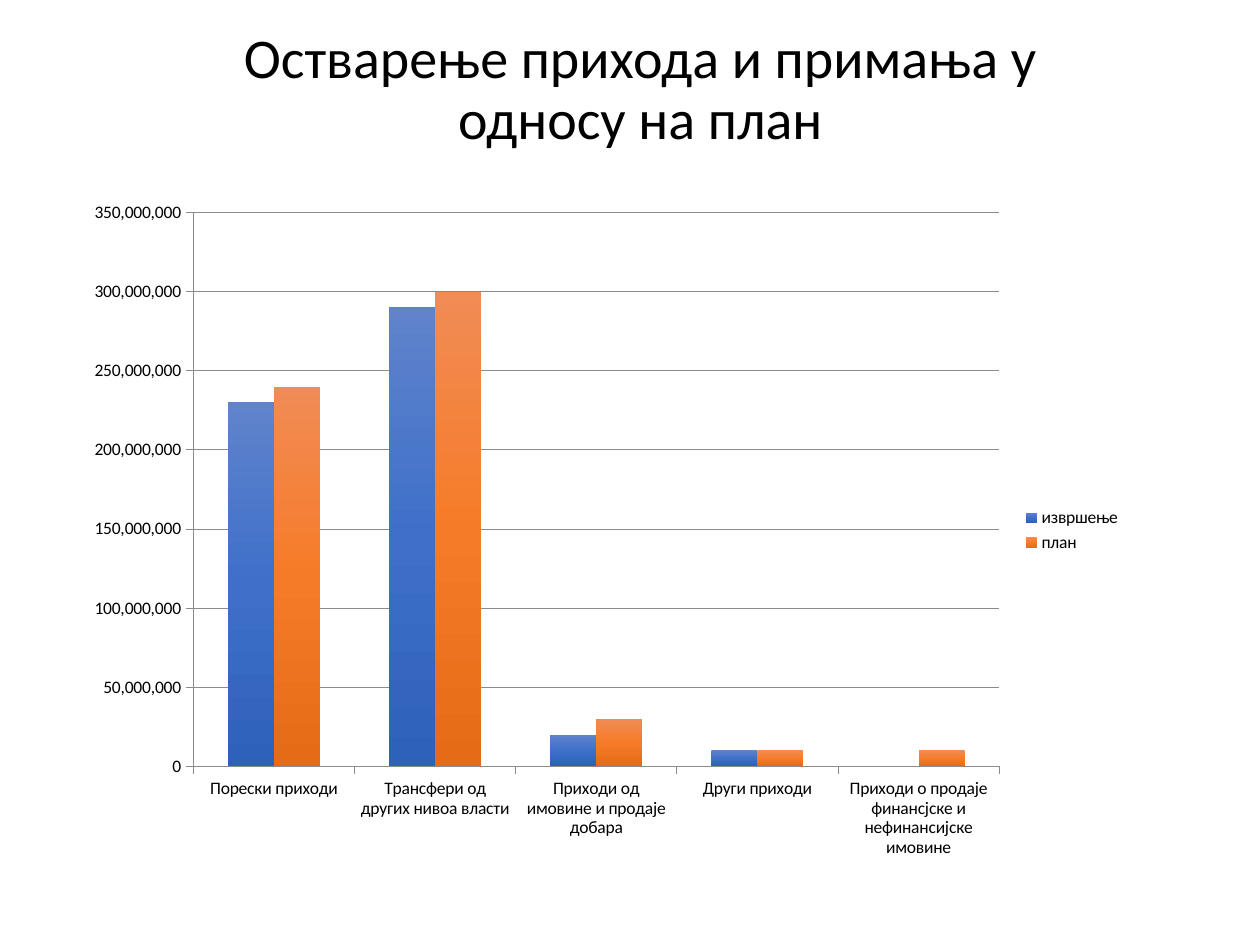
"""Build a slide comparing realised revenues with the plan in a column chart."""
from copy import deepcopy

from lxml.etree import SubElement
from pptx import Presentation
from pptx.chart.data import CategoryChartData as ChartData
from pptx.dml.color import RGBColor as Color
from pptx.enum.chart import XL_CHART_TYPE as ChartType
from pptx.enum.chart import XL_LEGEND_POSITION as LegendPosition
from pptx.enum.chart import XL_TICK_MARK as TickMark
from pptx.enum.text import MSO_ANCHOR as Anchor
from pptx.enum.text import MSO_AUTO_SIZE as AutoSize
from pptx.enum.text import PP_ALIGN as Align
from pptx.oxml.ns import qn
from pptx.util import Pt

TITLE = "Остварење прихода и примања у односу на план"
CATEGORIES = [
    "Порески приходи",
    "Трансфери од других нивоа власти",
    "Приходи од имовине и продаје добара",
    "Други приходи",
    "Приходи о продаје финансјске и нефинансијске имовине",
]
SERIES = {
    "извршење": [230000000, 290000000, 20000000, 10000000, 0],
    "план": [240000000, 300000000, 30000000, 10000000, 10000000],
}
THEME = {
    "font": "Calibri",
    "text": "000000",
    "line": "8B8B8B",
    "line_width": 0.5,
    "title_size": 32,
    "chart_size": 10,
    "gradients": [("6083CB", "3E70CA", "2E61BA"), ("F18C55", "F67B28", "E56B17")],
}
SLIDE_SIZE = (720, 540)
TITLE_BOX = (102, 54, 528, 36)
CHART_BOX = (42, 108, 606, 390)
PLOT_BOX = (110.5, 121.5, 460.5, 316.5)


def style_font(font, size):
    font.name = THEME["font"]
    font.size = Pt(size)
    font.color.rgb = Color.from_string(THEME["text"])


def add_title(slide):
    title = slide.shapes.title
    title.left, title.top, title.width, title.height = map(Pt, TITLE_BOX)
    frame = title.text_frame
    frame.text = TITLE
    frame.word_wrap = True
    frame.auto_size = AutoSize.NONE
    frame.vertical_anchor = Anchor.BOTTOM
    paragraph = frame.paragraphs[0]
    paragraph.alignment = Align.CENTER
    paragraph.line_spacing = 0.9
    style_font(paragraph.runs[0].font, THEME["title_size"])


def fill_gradient(series, colors):
    fill = series.format.fill
    fill.gradient()
    fill.gradient_angle = 270
    stop_list = next(series._element.iter(qn("a:gsLst")))
    stop_list.insert(1, deepcopy(stop_list[0]))
    for index, (stop, color) in enumerate(zip(fill.gradient_stops, colors)):
        stop.position = index / 2
        stop.color.rgb = Color.from_string(color)


def place_plot(chart):
    plot_area = next(chart._chartSpace.iter(qn("c:plotArea")))
    for old_layout in plot_area.findall(qn("c:layout")):
        plot_area.remove(old_layout)
    layout = SubElement(plot_area, qn("c:layout"))
    plot_area.insert(0, layout)
    manual = SubElement(layout, qn("c:manualLayout"))
    chart_left, chart_top, chart_width, chart_height = CHART_BOX
    left, top, width, height = PLOT_BOX
    settings = {
        "layoutTarget": "inner",
        "xMode": "edge",
        "yMode": "edge",
        "x": (left - chart_left) / chart_width,
        "y": (top - chart_top) / chart_height,
        "w": width / chart_width,
        "h": height / chart_height,
    }
    for name, value in settings.items():
        SubElement(manual, qn(f"c:{name}")).set("val", str(value))


def add_chart(slide):
    data = ChartData(number_format="#,##0")
    data.categories = CATEGORIES
    for name, values in SERIES.items():
        data.add_series(name, values)
    chart = slide.shapes.add_chart(
        ChartType.COLUMN_CLUSTERED, *map(Pt, CHART_BOX), data
    ).chart
    style_font(chart.font, THEME["chart_size"])
    chart.has_title = False
    chart.has_legend = True
    chart.legend.position = LegendPosition.RIGHT
    chart.legend.include_in_layout = False

    plot = chart.plots[0]
    plot.gap_width = 150
    plot.overlap = 0
    plot.vary_by_categories = False
    for series, colors in zip(plot.series, THEME["gradients"]):
        fill_gradient(series, colors)

    value_axis = chart.value_axis
    value_axis.minimum_scale = 0
    value_axis.maximum_scale = 350000000
    value_axis.major_unit = 50000000
    value_axis.has_major_gridlines = True
    value_axis.tick_labels.number_format = "#,##0"
    value_axis.tick_labels.number_format_is_linked = False
    for axis in (value_axis, chart.category_axis):
        axis.major_tick_mark = TickMark.OUTSIDE
        axis.minor_tick_mark = TickMark.NONE
    for item in (value_axis, chart.category_axis, value_axis.major_gridlines):
        item.format.line.width = Pt(THEME["line_width"])
        item.format.line.color.rgb = Color.from_string(THEME["line"])
    place_plot(chart)


def main():
    presentation = Presentation()
    presentation.slide_width, presentation.slide_height = map(Pt, SLIDE_SIZE)
    slide = presentation.slides.add_slide(presentation.slide_layouts[5])
    add_title(slide)
    add_chart(slide)
    presentation.save("out.pptx")


if __name__ == "__main__":
    main()
